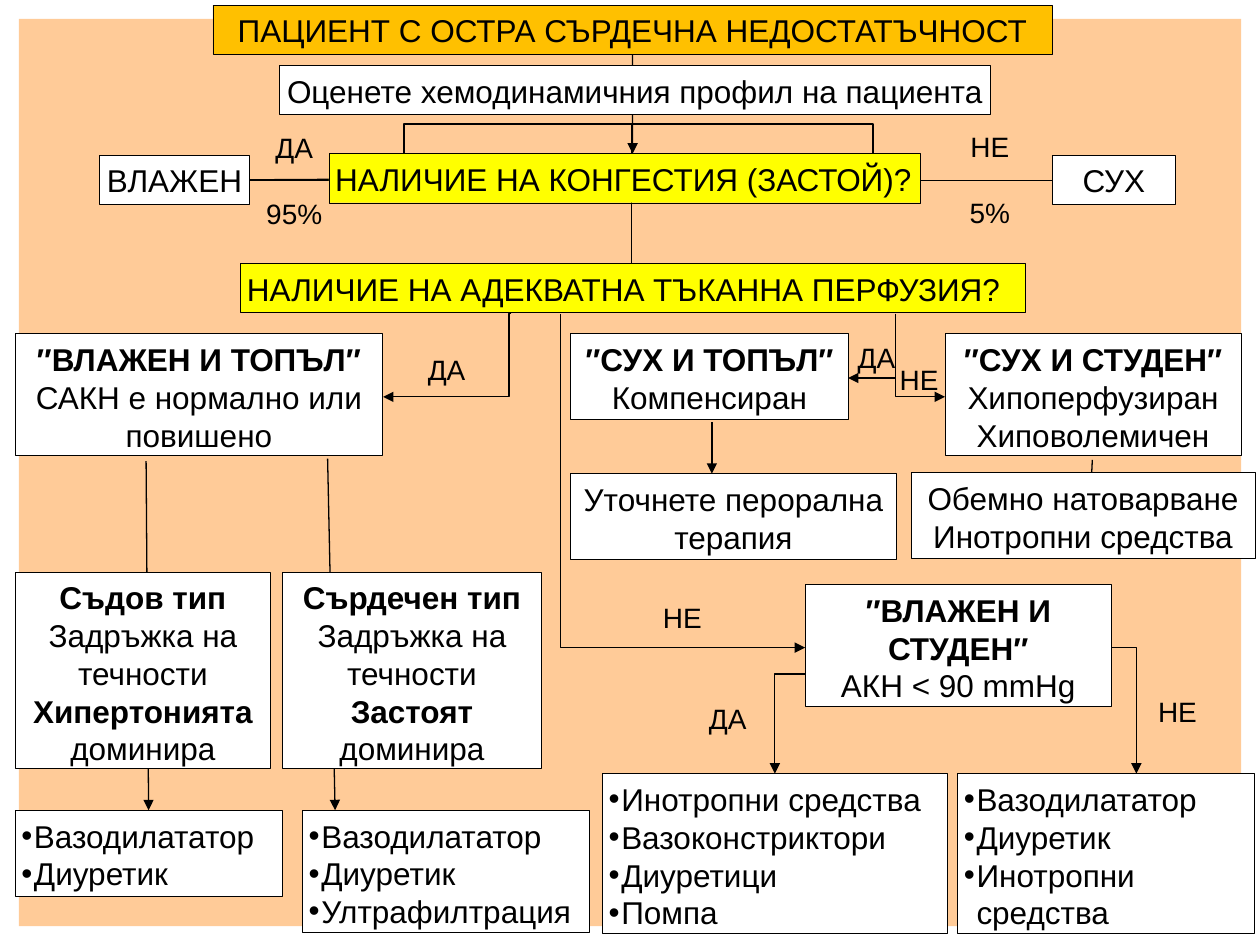
from lxml import etree
from pptx import Presentation
from pptx.dml.color import RGBColor
from pptx.enum import shapes, text
from pptx.oxml import ns
from pptx.util import Pt

FONT = "Arial"
WHITE, ORANGE, YELLOW = "FFFFFF", "FFC000", "FFFF00"
BAR_H, TWO_H, THREE_H, FOUR_H, TYPE_H = 28.1, 49, 69.8, 91.4, 112.3  # box heights
LABEL_W, LABEL_H = 39.6, 24.5
CENTER, LEFT = text.PP_ALIGN.CENTER, text.PP_ALIGN.LEFT
FIXED, GROW = text.MSO_AUTO_SIZE.NONE, text.MSO_AUTO_SIZE.SHAPE_TO_FIT_TEXT
TOP, BOTTOM = 0, 2


def rgb(hex_color):
    return RGBColor.from_string(hex_color)


def sub(parent, tag, **attrs):
    return etree.SubElement(parent, ns.qn(tag), attrs)


def add_bullet(p):
    pPr = p._p.get_or_add_pPr()
    pPr.set("marL", str(Pt(7.2)))
    pPr.set("indent", str(-Pt(7.2)))
    sub(pPr, "a:buFont", typeface=FONT)
    sub(pPr, "a:buChar", char="•")


def write(sp, lines, size=18, align=CENTER, wrap=True, bullets=False, gap=0, fit=GROW):
    """Fill a shape with paragraphs; text between ** marks is bold."""
    tf = sp.text_frame
    tf.word_wrap = wrap
    tf.auto_size = fit
    tf.vertical_anchor = text.MSO_ANCHOR.TOP
    tf.margin_left = tf.margin_right = tf.margin_top = tf.margin_bottom = Pt(3.6)
    for i, line in enumerate(lines):
        p = tf.add_paragraph() if i else tf.paragraphs[0]
        p.alignment = align
        p.space_before = Pt(gap if i else 0)
        if bullets:
            add_bullet(p)
        for j, part in enumerate(line.split("**")):
            if part:
                r = p.add_run()
                r.text = part
                r.font.name, r.font.size = FONT, Pt(size)
                r.font.bold = j % 2 == 1
                r.font.color.rgb = rgb("000000")


def set_line(sp, width, arrow=False):
    sp.line.color.rgb = rgb("000000")
    sp.line.width = Pt(width)
    if arrow:
        sub(sp._element.spPr.find(ns.qn("a:ln")), "a:tailEnd", type="triangle")


class Region:
    """Part of the flowchart; all coordinates are relative to its corner."""

    def __init__(self, slide, left, top):
        self.slide, self.left, self.top = slide, left, top

    def at(self, x, y):
        return Pt(self.left + x), Pt(self.top + y)

    def box(self, x, y, w, h, lines, fill=WHITE, line=0.5, **style):
        sp = self.slide.shapes.add_shape(
            shapes.MSO_SHAPE.RECTANGLE, *self.at(x, y), Pt(w), Pt(h))
        sp.shadow.inherit = False
        return self.finish(sp, lines, fill, line, **style)

    def holder(self, idx, x, y, w, h, lines, fill=WHITE, line=0.5, **style):
        """Place the template placeholder with this index."""
        sp = next(p for p in self.slide.placeholders if p.placeholder_format.idx == idx)
        sp.left, sp.top = self.at(x, y)
        sp.width, sp.height = Pt(w), Pt(h)
        return self.finish(sp, lines, fill, line, fit=FIXED, **style)

    def finish(self, sp, lines, fill, line, **style):
        sp.fill.solid()
        sp.fill.fore_color.rgb = rgb(fill)
        set_line(sp, line)
        write(sp, lines, **style)
        return sp

    def bullets(self, idx, x, y, w, h, lines):
        return self.holder(idx, x, y, w, h, lines, align=LEFT, bullets=True)

    def label(self, x, y, *lines, h=LABEL_H, gap=0):
        sp = self.slide.shapes.add_textbox(*self.at(x, y), Pt(LABEL_W), Pt(h))
        write(sp, lines, size=16, gap=gap)

    def arrow(self, start, end, kind=shapes.MSO_CONNECTOR.STRAIGHT):
        c = self.slide.shapes.add_connector(kind, *self.at(*start), *self.at(*end))
        set_line(c, 0.75, arrow=True)
        sub(c._element.spPr, "a:effectLst")
        return c

    def elbow(self, start, end, across, rise):
        c = self.arrow(start, end, shapes.MSO_CONNECTOR.ELBOW)
        geom = c._element.spPr.find(ns.qn("a:prstGeom"))
        geom.set("prst", "bentConnector4")
        guides = geom.find(ns.qn("a:avLst"))
        if guides is None:
            guides = sub(geom, "a:avLst")
        for name, value in (("adj1", across), ("adj2", rise)):
            sub(guides, "a:gd", name=name, fmla=f"val {value}")

    def route(self, *points):
        first, *rest = [self.at(*pt) for pt in points]
        builder = self.slide.shapes.build_freeform(*first, scale=1.0)
        builder.add_line_segments(rest, close=False)
        sp = builder.convert_to_shape()
        sp.shadow.inherit = False
        sp.fill.background()
        set_line(sp, 0.75, arrow=True)


def add_backdrop(slide, x, y, w, h):
    sp = slide.shapes.add_shape(shapes.MSO_SHAPE.RECTANGLE, Pt(x), Pt(y), Pt(w), Pt(h))
    sp.shadow.inherit = False
    sp.fill.solid()
    sp.fill.fore_color.rgb = rgb("FF9933")
    sub(sp._element.spPr.find(".//" + ns.qn("a:srgbClr")), "a:alpha", val="50000")
    sp.line.fill.background()
    slide.shapes._spTree.insert(2, sp._element)  # behind the placeholders


def add_assessment(reg):
    title = reg.holder(0, 65.7, 0.9, 479.5, BAR_H,
                       ["ПАЦИЕНТ С ОСТРА СЪРДЕЧНА НЕДОСТАТЪЧНОСТ"], ORANGE, 0.25)
    down = reg.arrow((305.5, 29), (305.5, 85.8))
    down.begin_connect(title, BOTTOM)
    reg.arrow((301.1, 99.5), (44.1, 101))
    reg.arrow((301.1, 101), (580.5, 101))
    reg.elbow((44.1, 101), (304.7, 162.2), 50200, -52500)
    reg.elbow((579.8, 101), (304.7, 162.2), 49800, -52500)
    reg.box(103.8, 35.4, 406.1, BAR_H,
            ["Оценете хемодинамичния профил на пациента"], wrap=False)
    reg.box(131.9, 85.8, 337.7, BAR_H, ["НАЛИЧИЕ НА КОНГЕСТИЯ (ЗАСТОЙ)?"],
            YELLOW, 0.25, align=LEFT, wrap=False)
    reg.box(81.5, 148.5, 448.6, BAR_H, ["НАЛИЧИЕ НА АДЕКВАТНА ТЪКАННА ПЕРФУЗИЯ?"],
            YELLOW, 0.25, align=LEFT)
    reg.box(0.9, 86.6, 85.7, BAR_H, ["ВЛАЖЕН"], wrap=False)
    reg.box(545.2, 86.6, 70.6, BAR_H, ["СУХ"])
    reg.label(92.3, 69.3, "ДА", "95%", h=60.5, gap=18.4)
    reg.label(489.8, 68.6, "НЕ", "5%", h=60.5, gap=18.4)


def add_wet_warm(reg):
    vessel_drugs = reg.bullets(1, 0, 284, 152.6, TWO_H, ["Вазодилататор", "Диуретик"])
    reg.bullets(2, 164.2, 284, 164.2, THREE_H,
                ["Вазодилататор", "Диуретик", "Ултрафилтрация"])
    reg.arrow((74.9, 84.5), (76.3, 284)).end_connect(vessel_drugs, TOP)
    reg.arrow((178.6, 83.1), (182.9, 284))
    reg.box(0, 11.8, 210.2, THREE_H,
            ["**″ВЛАЖЕН И ТОПЪЛ″**", "САКН е нормално или повишено"])
    for x, w, kind, cause in ((0, 146.2, "Съдов тип", "Хипертонията"),
                              (152.7, 148.3, "Сърдечен тип", "Застоят")):
        reg.box(x, 147.9, w, TYPE_H,
                [f"**{kind}**", "Задръжка на течности", f"**{cause}** доминира"])
    reg.route((283.7, 0.3), (282.3, 0.3), (282.3, 47.8), (210.3, 47.8))
    reg.label(226.8, 19, "ДА")


def add_dry(reg):
    reg.arrow((298.2, 83.8), (296.8, 113.3))
    reg.box(0.2, 11.8, 158.4, TWO_H, ["**″СУХ И ТОПЪЛ″**", "Компенсиран"])
    reg.box(214, 11.8, 169.2, THREE_H,
            ["**″СУХ И СТУДЕН″**", "Хипоперфузиран", "Хиповолемичен"])
    reg.box(194.6, 91, 196.6, TWO_H, ["Обемно натоварване", "Инотропни средства"])
    reg.box(0.2, 91.7, 185.8, TWO_H, ["Уточнете перорална терапия"])
    reg.arrow((80.8, 62.2), (80.8, 91.7))
    reg.route((185.9, 0.3), (185.9, 37), (158.6, 37))
    reg.route((185.9, 0.3), (185.9, 47.8), (214, 47.8))
    reg.label(155, 11.8, "ДА")
    reg.label(179.4, 24.8, "НЕ")


def add_wet_cold(reg):
    reg.box(140.1, 155.1, 175, THREE_H, ["**″ВЛАЖЕН И СТУДЕН″**", "АКН < 90 mmHg"])
    reg.bullets(3, 24.2, 263.1, 197.3, FOUR_H,
                ["Инотропни средства", "Вазоконстриктори", "Диуретици", "Помпа"])
    reg.bullets(4, 227.2, 263.1, 169.9, FOUR_H,
                ["Вазодилататор", "Диуретик", "Инотропни средства"])
    reg.route((0.4, 0.3), (0.4, 191.1), (140.1, 191.1))
    reg.route((140.1, 206.2), (122.8, 206.2), (122.8, 263.1))
    reg.route((315, 191.1), (329.4, 191.1), (329.4, 263.1))
    reg.label(50.1, 160.8, "НЕ")
    reg.label(76, 218.4, "ДА")
    reg.label(333, 214.1, "НЕ")


def main():
    prs = Presentation()
    prs.slide_width, prs.slide_height = Pt(720), Pt(540)
    s = prs.slides.add_slide(prs.slide_layouts[4])
    add_backdrop(s, 10.8, 10.8, 698.4, 518.4)
    add_assessment(Region(s, 56, 2))
    add_wet_warm(Region(s, 8.6, 179))
    add_dry(Region(s, 326, 179))
    add_wet_cold(Region(s, 320, 179))
    prs.save("out.pptx")


if __name__ == "__main__":
    main()
